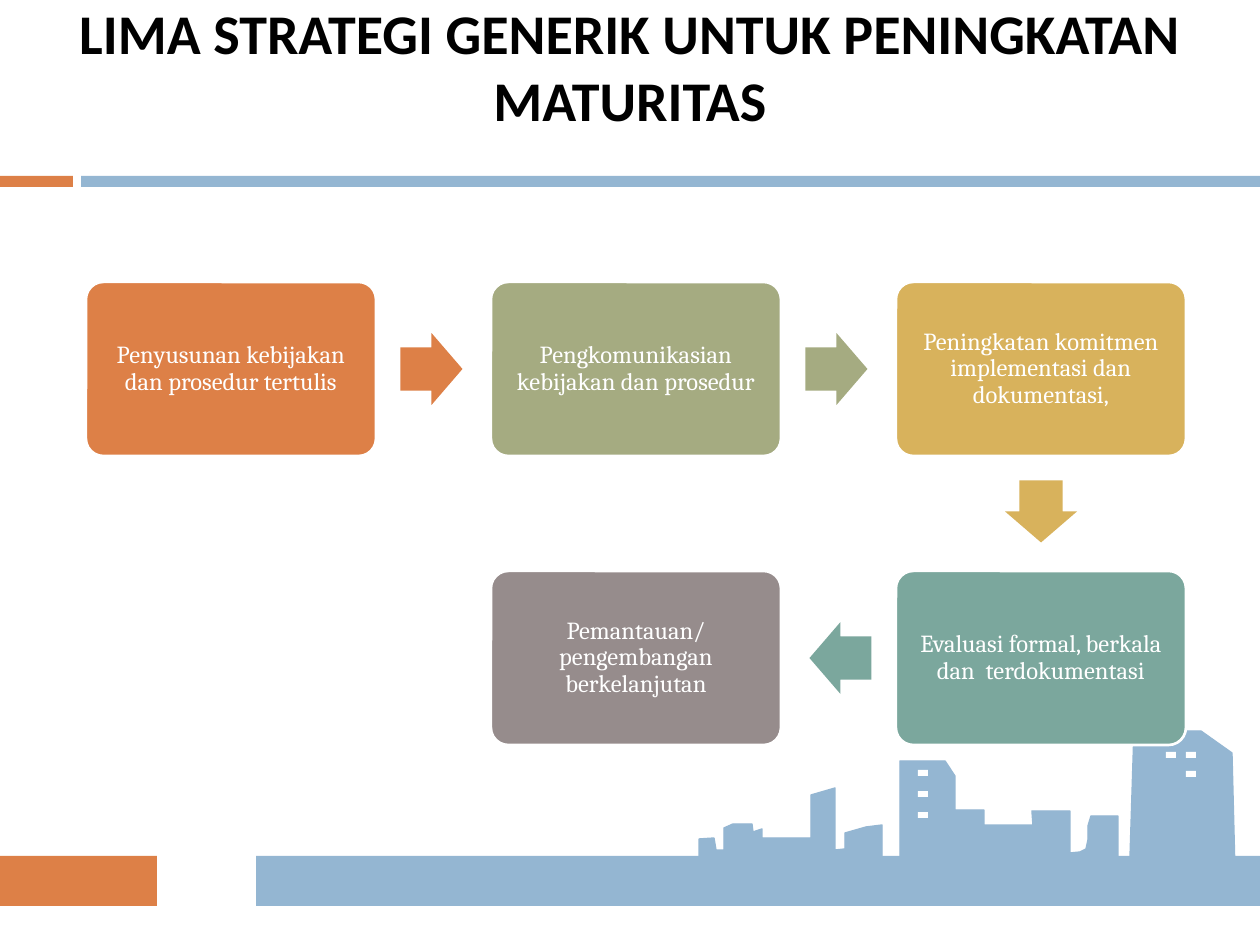
from dataclasses import dataclass

from pptx import Presentation
from pptx.dml.color import RGBColor
from pptx.enum.shapes import MSO_SHAPE
from pptx.enum.text import MSO_ANCHOR, MSO_AUTO_SIZE, PP_ALIGN
from pptx.slide import Slide
from pptx.util import Inches, Pt

RECTANGLE = MSO_SHAPE.RECTANGLE
ROUNDED = MSO_SHAPE.ROUNDED_RECTANGLE
ARROW = MSO_SHAPE.RIGHT_ARROW
MIDDLE = MSO_ANCHOR.MIDDLE
CENTER = PP_ALIGN.CENTER
NO_AUTOFIT = MSO_AUTO_SIZE.NONE

PIXEL = 914400 / 126
ORANGE, BLUE, WHITE, BLACK = "DD8047", "94B6D2", "FFFFFF", "000000"

BOX_WIDTH, BOX_HEIGHT = 290, 174
GRID_LEFT, GRID_TOP = 86, 282
COLUMN_STEP, ROW_STEP = 405, 289
ARROW_WIDTH, ARROW_HEIGHT = 62, 72
ARROW_SHIFT = 2

BARS = [
    (0, 176, 73, 11, ORANGE),
    (81, 176, 1179, 11, BLUE),
    (256, 856, 1004, 50, BLUE),
    (0, 856, 157, 50, ORANGE),
]
SKYLINE = [
    (699, 863), (699, 839), (714, 838), (716, 850), (724, 850), (724, 828),
    (733, 824), (752, 824), (753, 832), (762, 829), (762, 838), (811, 838),
    (811, 795), (835, 788), (835, 850), (845, 849), (845, 833), (866, 827),
    (882, 825), (882, 859), (900, 861), (900, 761), (945, 761), (955, 776),
    (955, 810), (984, 810), (984, 825), (1033, 825), (1032, 811), (1070, 811),
    (1070, 853), (1080, 852), (1086, 849), (1088, 840), (1088, 826), (1091, 816),
    (1118, 816), (1118, 858), (1130, 858), (1134, 731), (1201, 731), (1232, 753),
    (1235, 872), (699, 874),
]
WINDOWS = [(918, 770), (918, 791), (918, 812), (1166, 752), (1186, 752), (1186, 771)]
STRATEGIES = [
    (0, 0, ORANGE, "Penyusunan kebijakan dan prosedur tertulis"),
    (1, 0, "A5AB81", "Pengkomunikasian kebijakan dan prosedur"),
    (2, 0, "D8B25C", "Peningkatan komitmen implementasi dan dokumentasi,"),
    (2, 1, "7BA79D", "Evaluasi formal, berkala dan  terdokumentasi"),
    (1, 1, "968C8C", "Pemantauan/pengembangan berkelanjutan"),
]


def px(length):
    return round(length * PIXEL)


def rgb(value):
    return RGBColor.from_string(value)


@dataclass
class SlideBuilder:
    """Draws styled elements on the current slide."""

    slide: Slide
    title_font: str = "Calibri"
    body_font: str = "Cambria"

    def paint(self, shape, fill, line=None, line_width=1.5):
        shape.shadow.inherit = False
        shape.fill.solid()
        shape.fill.fore_color.rgb = rgb(fill)
        if line:
            shape.line.color.rgb = rgb(line)
            shape.line.width = Pt(line_width)
        else:
            shape.line.fill.background()

    def add_text(self, frame, text, font, size, color, bold=False):
        frame.word_wrap = True
        frame.auto_size = NO_AUTOFIT
        frame.vertical_anchor = MIDDLE
        paragraph = frame.paragraphs[0]
        paragraph.alignment = CENTER
        run = paragraph.add_run()
        run.text = text
        run.font.name = font
        run.font.size = Pt(size)
        run.font.bold = bold
        run.font.color.rgb = rgb(color)
        return paragraph

    def title(self, text):
        title = self.slide.shapes.title
        title.left, title.top, title.width, title.height = 0, px(31), px(1260), px(137)
        frame = title.text_frame
        frame.margin_top, frame.margin_bottom = px(6), px(74)
        self.add_text(frame, text, self.title_font, 32, BLACK, True)

    def shape(self, kind, left, top, width, height, fill, line=None):
        shape = self.slide.shapes.add_shape(kind, px(left), px(top), px(width), px(height))
        self.paint(shape, fill, line)
        return shape

    def outline(self, points, color):
        builder = self.slide.shapes.build_freeform(*points[0], scale=PIXEL)
        builder.add_line_segments(points[1:], close=True)
        self.paint(builder.convert_to_shape(), color, color, 0.79)

    def box(self, center_x, center_y, fill, text):
        box = self.shape(ROUNDED, center_x - BOX_WIDTH / 2, center_y - BOX_HEIGHT / 2,
                         BOX_WIDTH, BOX_HEIGHT, fill, WHITE)
        box.adjustments[0] = 0.1
        frame = box.text_frame
        frame.margin_left = frame.margin_right = px(8)
        frame.margin_top = frame.margin_bottom = px(8)
        paragraph = self.add_text(frame, text, self.body_font, 14, WHITE)
        paragraph.line_spacing = 0.9

    def arrow(self, start, end, fill):
        across = (end[0] > start[0]) - (end[0] < start[0])
        down = (end[1] > start[1]) - (end[1] < start[1])
        center_x = (start[0] + end[0]) / 2 - ARROW_SHIFT * across
        center_y = (start[1] + end[1]) / 2 - ARROW_SHIFT * down
        arrow = self.shape(ARROW, center_x - ARROW_WIDTH / 2, center_y - ARROW_HEIGHT / 2,
                           ARROW_WIDTH, ARROW_HEIGHT, fill)
        arrow.adjustments[0], arrow.adjustments[1] = 0.6, 0.5
        arrow.rotation = 90 if down else 90 - 90 * across


def box_center(column, row):
    return (GRID_LEFT + column * COLUMN_STEP + BOX_WIDTH / 2,
            GRID_TOP + row * ROW_STEP + BOX_HEIGHT / 2)


def main():
    presentation = Presentation()
    presentation.slide_width, presentation.slide_height = Inches(10), Inches(7.5)
    builder = SlideBuilder(presentation.slides.add_slide(presentation.slide_layouts[5]))

    for left, top, width, height, color in BARS:
        builder.shape(RECTANGLE, left, top, width, height, color)
    builder.outline(SKYLINE, BLUE)
    for left, top in WINDOWS:
        builder.shape(RECTANGLE, left, top, 10, 6, WHITE)

    builder.title("LIMA STRATEGI GENERIK UNTUK PENINGKATAN MATURITAS")
    centers = [box_center(column, row) for column, row, _, _ in STRATEGIES]
    for index, (_, _, color, text) in enumerate(STRATEGIES):
        builder.box(*centers[index], color, text)
        if index + 1 < len(STRATEGIES):
            builder.arrow(centers[index], centers[index + 1], color)

    presentation.save("out.pptx")


if __name__ == "__main__":
    main()
